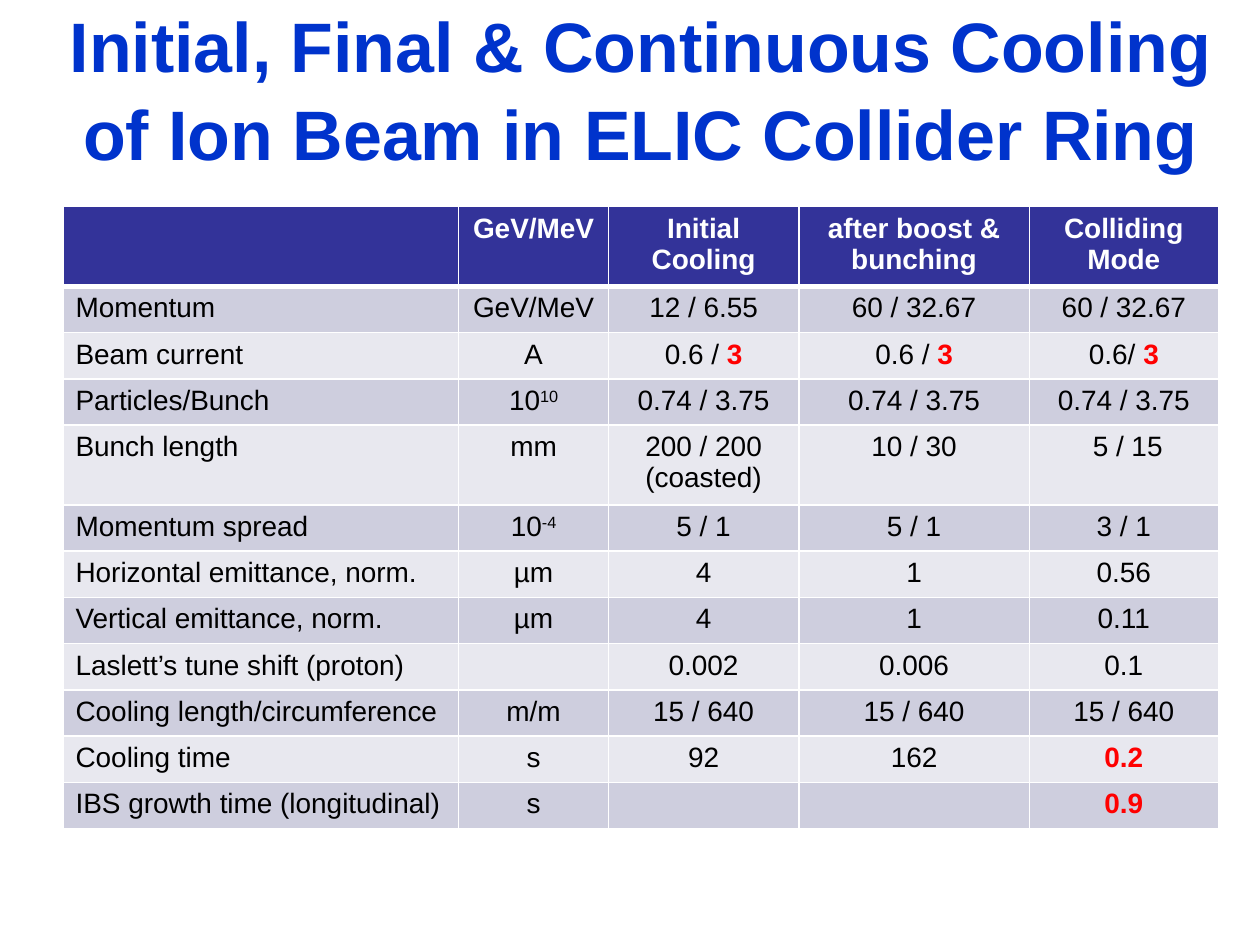
from dataclasses import dataclass

from lxml import etree
from pptx import Presentation
from pptx import util as u
from pptx.dml.color import RGBColor
from pptx.enum import text
from pptx.oxml import ns


@dataclass(frozen=True)
class Theme:
    font: str = "Arial"
    title_size: int = 40
    table_size: int = 16
    title: str = "0033CC"
    header: str = "333399"
    bands: tuple = ("CECEDE", "E8E8EF")
    white: str = "FFFFFF"
    body: str = "000000"
    accent: str = "FF0000"


THEME = Theme()
CENTER = text.PP_ALIGN.CENTER
LEFT = text.PP_ALIGN.LEFT
TITLE = "Initial, Final & Continuous Cooling of Ion Beam in ELIC Collider Ring"
COLUMN_WIDTHS = (3.14, 1.19, 1.51, 1.83, 1.5)
HEADER_HEIGHT, ROW_HEIGHT, LAST_HEIGHT = 0.57, 0.34, 0.37
HEADINGS = ("", "GeV/MeV", "Initial Cooling", "after boost & bunching", "Colliding Mode")


def accent(words):
    return words, {"color": THEME.accent, "bold": True}


def power(exponent):
    return [("10", {}), (exponent, {"baseline": "30000"})]


PARAMETERS = (
    ("Momentum", "GeV/MeV", "12 / 6.55", "60 / 32.67", "60 / 32.67"),
    ("Beam current", "A", [("0.6 / ", {}), accent("3")],
     [("0.6 / ", {}), accent("3")], [("0.6/ ", {}), accent("3")]),
    ("Particles/Bunch", power("10"), "0.74 / 3.75", "0.74 / 3.75", "0.74 / 3.75"),
    ("Bunch length", "mm", "200 / 200 (coasted)", "10 / 30", " 5 / 15"),
    ("Momentum spread", power("-4"), "5 / 1", "5 / 1", "3 / 1"),
    ("Horizontal emittance, norm.", "µm", "4", "1", "0.56"),
    ("Vertical emittance, norm.", "µm", "4", "1", "0.11"),
    ("Laslett’s tune shift (proton)", "", "0.002", "0.006", "0.1"),
    ("Cooling length/circumference", "m/m", "15 / 640", "15 / 640", "15 / 640"),
    ("Cooling time", "s", "92", "162", [accent("0.2")]),
    ("IBS growth time (longitudinal)", "s", "", "", [accent("0.9")]),
)


def apply(target, values):
    for name, value in values.items():
        setattr(target, name, value)


def write(para, content, align, size, color, bold=False):
    para.alignment = align
    spans = content if isinstance(content, list) else [(content, {})]
    for words, changes in spans:
        if not words:
            para._p.get_or_add_endParaRPr().set("sz", str(size * 100))
            continue
        span = para.add_run()
        span.text = words
        look = {"name": THEME.font, "size": u.Pt(size), "bold": changes.get("bold", bold)}
        apply(span.font, look)
        span.font.color.rgb = RGBColor.from_string(changes.get("color", color))
        if "baseline" in changes:
            span.font._element.set("baseline", changes["baseline"])


def add_title(page):
    box = page.shapes.add_textbox(*map(u.Inches, (0.17, 0.1, 9.83, 1.17)))
    frame = box.text_frame
    apply(frame, {"word_wrap": True, "vertical_anchor": text.MSO_ANCHOR.MIDDLE})
    frame.paragraphs[0].line_spacing = 1.05
    write(frame.paragraphs[0], TITLE, CENTER, THEME.title_size, THEME.title, True)


def set_borders(cell, widths):
    properties = cell._tc.get_or_add_tcPr()
    for side, width in widths.items():
        line = etree.SubElement(properties, ns.qn(f"a:ln{side}"), w=str(u.Pt(width)))
        fill = etree.SubElement(line, ns.qn("a:solidFill"))
        etree.SubElement(fill, ns.qn("a:srgbClr"), val=THEME.white)


def add_table(page):
    rows = (HEADINGS,) + PARAMETERS
    heights = [HEADER_HEIGHT] + [ROW_HEIGHT] * (len(rows) - 2) + [LAST_HEIGHT]
    place = (0.5, 1.64, sum(COLUMN_WIDTHS), sum(heights))
    table = page.shapes.add_table(len(rows), len(COLUMN_WIDTHS), *map(u.Inches, place)).table
    apply(table, {"horz_banding": False})
    for column, width in zip(table.columns, COLUMN_WIDTHS):
        column.width = u.Inches(width)
    for r, (row, height) in enumerate(zip(rows, heights)):
        table.rows[r].height = u.Inches(height)
        header = r == 0
        background = THEME.header if header else THEME.bands[(r - 1) % 2]
        color = THEME.white if header else THEME.body
        borders = {"L": 1, "R": 1, "T": 3 if r == 1 else 1, "B": 3 if header else 1}
        for c, content in enumerate(row):
            cell = table.cell(r, c)
            set_borders(cell, borders)
            cell.fill.solid()
            cell.fill.fore_color.rgb = RGBColor.from_string(background)
            align = CENTER if c else LEFT
            write(cell.text_frame.paragraphs[0], content, align, THEME.table_size, color, header)


def main():
    deck = Presentation()
    apply(deck, {"slide_width": u.Inches(10), "slide_height": u.Inches(7.5)})
    page = deck.slides.add_slide(deck.slide_layouts[6])
    add_title(page)
    add_table(page)
    deck.save("out.pptx")


if __name__ == "__main__":
    main()
